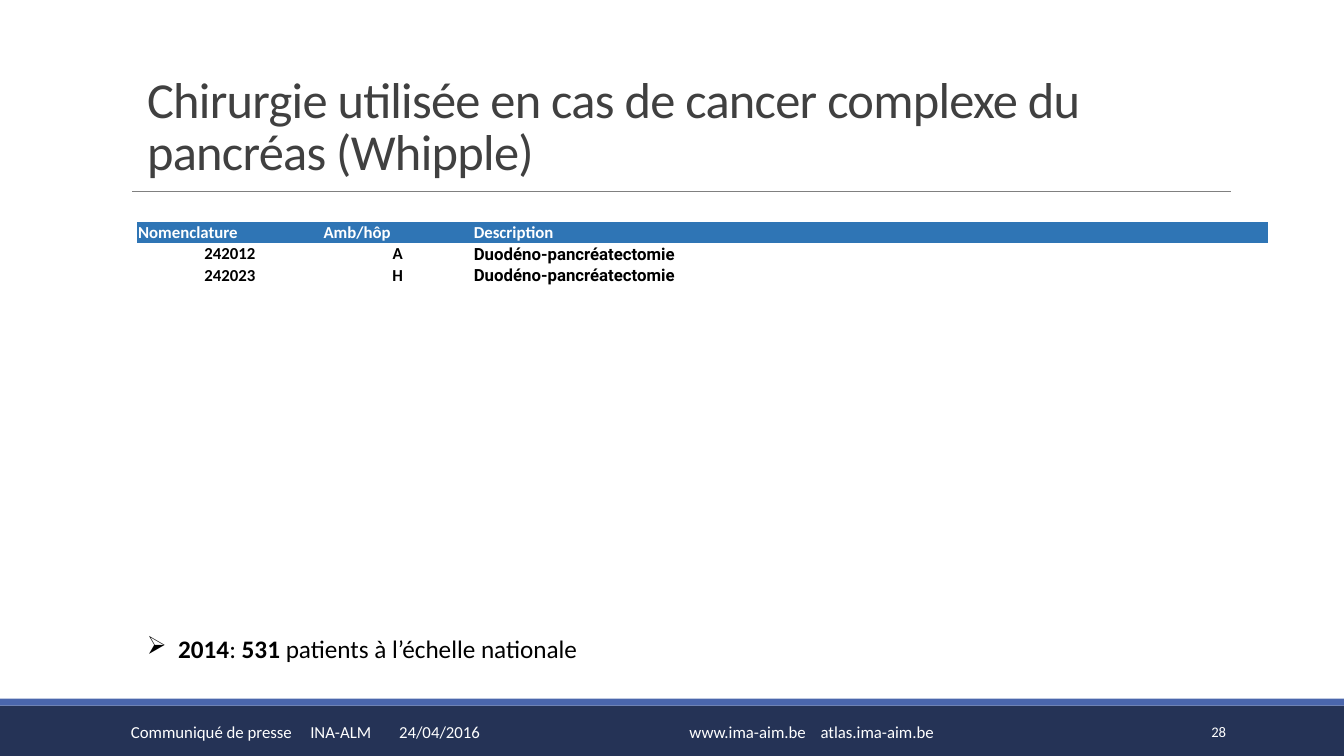
from lxml import etree
from pptx import Presentation
from pptx.dml.color import RGBColor
from pptx.enum.shapes import MSO_CONNECTOR, MSO_SHAPE
from pptx.enum.text import MSO_ANCHOR, PP_ALIGN
from pptx.oxml.ns import qn
from pptx.util import Inches, Pt

LEFT, CENTER, RIGHT = PP_ALIGN.LEFT, PP_ALIGN.CENTER, PP_ALIGN.RIGHT
BOTTOM, MIDDLE, TOP = MSO_ANCHOR.BOTTOM, MSO_ANCHOR.MIDDLE, MSO_ANCHOR.TOP
RECTANGLE, STRAIGHT = MSO_SHAPE.RECTANGLE, MSO_CONNECTOR.STRAIGHT

NAVY = RGBColor(0x25, 0x33, 0x56)
BLUE = RGBColor(0x4A, 0x66, 0xAC)
HEADER_BLUE = RGBColor(0x2F, 0x75, 0xB5)
GRAY = RGBColor(0x80, 0x80, 0x80)
DARK_GRAY = RGBColor(0x40, 0x40, 0x40)
WHITE = RGBColor(0xFF, 0xFF, 0xFF)
BLACK = RGBColor(0, 0, 0)

WIDTH, HEIGHT = Inches(13.33), Inches(7.5)
NO_TABLE_STYLE = "{2D5ABB26-0587-4C30-8999-92F81FD0307C}"
CONTENT_LEFT = 10.2
FOOTER_TOP, FOOTER_HEIGHT = 94.13, 5.33

HEADERS = ["Nomenclature", "Amb/hôp", "Description"]
PROCEDURES = [
    ["242012", "A", "Duodéno-pancréatectomie"],
    ["242023", "H", "Duodéno-pancréatectomie"],
]
COLUMN_WIDTHS = [13.8, 11.18, 59.18]
ROW_HEIGHT = 2.76


def across(percent):
    return round(WIDTH * percent / 100)


def down(percent):
    return round(HEIGHT * percent / 100)


def place(left, top, width, height):
    """Turn percentages of the slide into lengths."""
    return across(left), down(top), across(width), down(height)


def add_tab_stops(paragraph, stops):
    tab_list = etree.SubElement(paragraph._p.get_or_add_pPr(), qn("a:tabLst"))
    for stop in stops:
        etree.SubElement(tab_list, qn("a:tab"), pos=str(Inches(stop)), algn="l")


def add_bullet(paragraph, character, indent):
    properties = paragraph._p.get_or_add_pPr()
    properties.set("marL", str(Inches(indent)))
    properties.set("indent", str(-Inches(indent)))
    etree.SubElement(properties, qn("a:buChar"), char=character)


def write(paragraph, text, size=12, color=BLACK, bold=False, font="Calibri",
          align=LEFT, spacing=None):
    """Append one formatted run; spacing is in hundredths of a point."""
    paragraph.alignment = align
    run = paragraph.add_run()
    run.text = text
    run.font.size = Pt(size)
    run.font.name = font
    run.font.bold = bold
    run.font.color.rgb = color
    if spacing is not None:
        run.font._element.set("spc", str(spacing))


def add_box(slide, area, anchor=TOP):
    """Add an empty text box and return its text frame."""
    frame = slide.shapes.add_textbox(*place(*area)).text_frame
    frame.word_wrap = True
    frame.vertical_anchor = anchor
    return frame


def add_bar(slide, top, height, color):
    bar = slide.shapes.add_shape(RECTANGLE, *place(0, top, 100, height))
    bar.shadow.inherit = False
    bar.fill.solid()
    bar.fill.fore_color.rgb = color
    bar.line.fill.background()


def add_rule(slide, left, right, top):
    rule = slide.shapes.add_connector(
        STRAIGHT, across(left), down(top), across(right), down(top))
    rule.line.color.rgb = GRAY
    rule.line.width = Pt(0.5)
    etree.SubElement(rule._element.spPr, qn("a:effectLst"))


def add_title(slide, text):
    frame = add_box(slide, (CONTENT_LEFT, 3.33, 82.5, 21.2), BOTTOM)
    paragraph = frame.paragraphs[0]
    paragraph.line_spacing = 0.85
    write(paragraph, text, size=36, color=DARK_GRAY, spacing=-50)


def add_footer(slide, left, width, text, stops=(), inset=0.1, **text_format):
    frame = add_box(slide, (left, FOOTER_TOP, width, FOOTER_HEIGHT), MIDDLE)
    frame.margin_left = Inches(inset)
    paragraph = frame.paragraphs[0]
    if stops:
        add_tab_stops(paragraph, stops)
    write(paragraph, text, color=WHITE, **text_format)


def fill_cell(cell, text, background=None, **text_format):
    cell.margin_left = cell.margin_right = cell.margin_top = Inches(0.01)
    cell.margin_bottom = 0
    cell.vertical_anchor = BOTTOM
    if background is None:
        cell.fill.background()
    else:
        cell.fill.solid()
        cell.fill.fore_color.rgb = background
    write(cell.text_frame.paragraphs[0], text, bold=True, **text_format)


def add_procedure_table(slide):
    row_count = len(PROCEDURES) + 1
    area = place(CONTENT_LEFT, 29.33, sum(COLUMN_WIDTHS), ROW_HEIGHT * row_count)
    table = slide.shapes.add_table(row_count, len(HEADERS), *area).table
    table.horz_banding = False
    table._tbl.tblPr.find(qn("a:tableStyleId")).text = NO_TABLE_STYLE
    for column, width in zip(table.columns, COLUMN_WIDTHS):
        column.width = across(width)
    for row in table.rows:
        row.height = down(ROW_HEIGHT)
    for column, header in enumerate(HEADERS):
        fill_cell(table.cell(0, column), header, HEADER_BLUE, color=WHITE)
    for row, (code, setting, description) in enumerate(PROCEDURES, start=1):
        fill_cell(table.cell(row, 0), code, align=CENTER)
        fill_cell(table.cell(row, 1), setting, align=CENTER)
        fill_cell(table.cell(row, 2), description, font="Roboto")


def add_patient_count(slide):
    frame = add_box(slide, (CONTENT_LEFT, 83.07, 55.88, 5.33))
    paragraph = frame.paragraphs[0]
    add_bullet(paragraph, "➢", 0.31)
    for text, bold in [("2014", True), (": ", False), ("531 ", True),
                       ("patients à l’échelle nationale", False)]:
        write(paragraph, text, size=18, bold=bold)


def main():
    presentation = Presentation()
    presentation.slide_width, presentation.slide_height = WIDTH, HEIGHT
    slide = presentation.slides.add_slide(presentation.slide_layouts[6])

    add_bar(slide, 93.33, 6.67, NAVY)
    add_bar(slide, 92.4, 0.93, BLUE)
    add_rule(slide, 9.83, 91.58, 25.33)
    add_title(slide, "Chirurgie utilisée en cas de cancer complexe du pancréas (Whipple)")
    add_footer(slide, 9, 30.68, "Communiqué de presse\tINA-ALM\t24/04/2016",
               stops=(1.78, 2.66))
    add_footer(slide, 40.65, 39.53, "www.ima-aim.be\tatlas.ima-aim.be",
               stops=(1.3,), inset=1.42)
    add_footer(slide, 81.23, 10.73, "28", size=10.5, align=RIGHT)
    add_procedure_table(slide)
    add_patient_count(slide)

    presentation.save("out.pptx")


if __name__ == "__main__":
    main()
